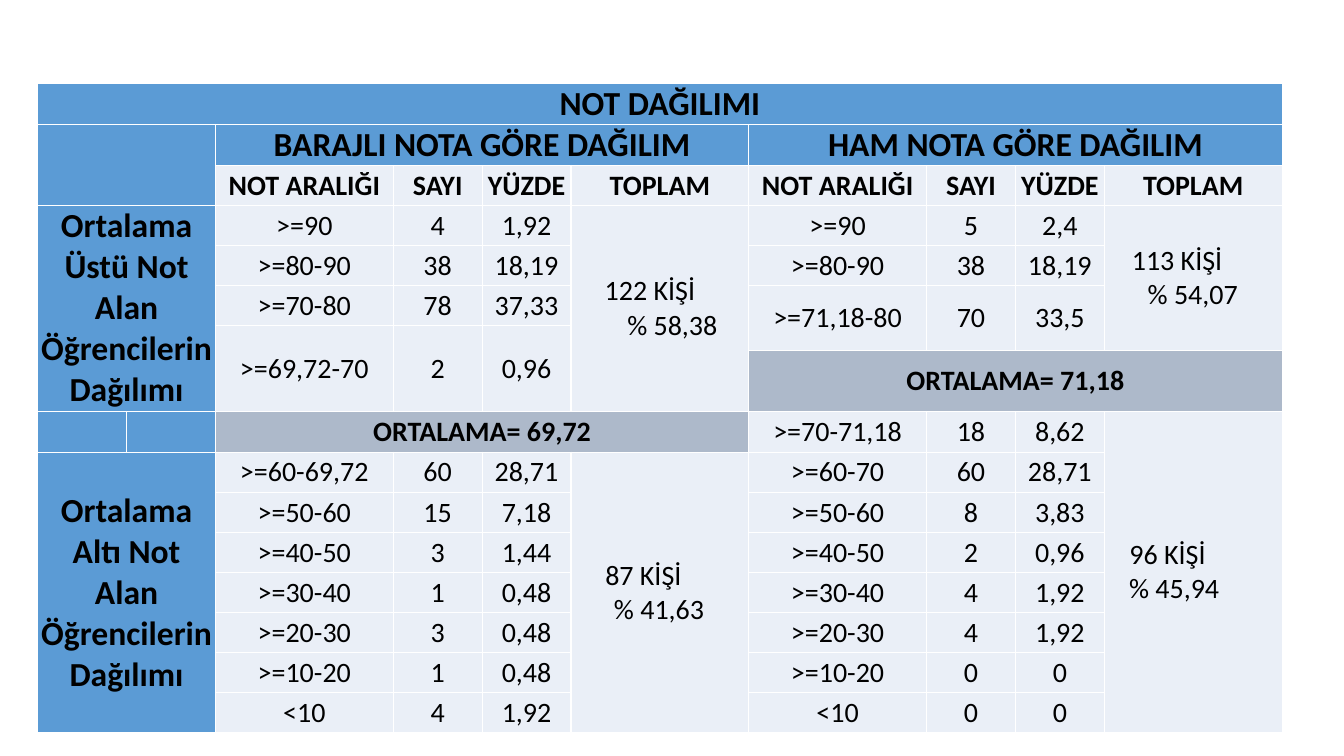
from lxml.etree import SubElement
from pptx import Presentation
from pptx.dml.color import RGBColor
from pptx.enum.text import MSO_ANCHOR, PP_ALIGN
from pptx.oxml.ns import qn
from pptx.util import Cm, Pt

COLORS = {"header": "5B9BD5", "body": "EAEFF7", "average": "ADB9CA",
          "border": "FFFFFF", "text": "000000"}
COLUMN_UNIT = 2.24
COLUMN_UNITS = [1, 1, 2, 1, 1, 2, 2, 1, 1, 2]
ROW_HEIGHTS = [1.03] * 2 + [1.01] * 4 + [0.63, 1.53, 1.03] + [1.01] * 7

HEADINGS = ["NOT ARALIĞI", "SAYI", "YÜZDE", "TOPLAM"]
# First column of each half, then its table row: grade range, count, percentage
GRADES = {
    2: {3: (">=90", "4", "1,92"), 4: (">=80-90", "38", "18,19"),
        5: (">=70-80", "78", "37,33"), 6: (">=69,72-70", "2", "0,96"),
        9: (">=60-69,72", "60", "28,71"), 10: (">=50-60", "15", "7,18"),
        11: (">=40-50", "3", "1,44"), 12: (">=30-40", "1", "0,48"),
        13: (">=20-30", "3", "0,48"), 14: (">=10-20", "1", "0,48"),
        15: ("<10", "4", "1,92")},
    6: {3: (">=90", "5", "2,4"), 4: (">=80-90", "38", "18,19"),
        5: (">=71,18-80", "70", "33,5"), 8: (">=70-71,18", "18", "8,62"),
        9: (">=60-70", "60", "28,71"), 10: (">=50-60", "8", "3,83"),
        11: (">=40-50", "2", "0,96"), 12: (">=30-40", "4", "1,92"),
        13: (">=20-30", "4", "1,92"), 14: (">=10-20", "0", "0"),
        15: ("<10", "0", "0")},
}
# Row, column, text, row span, column span
TITLES = [
    (0, 0, "NOT DAĞILIMI", 1, 10),
    (1, 0, "", 2, 2),
    (1, 2, "BARAJLI NOTA GÖRE DAĞILIM", 1, 4),
    (1, 6, "HAM NOTA GÖRE DAĞILIM", 1, 4),
    (3, 0, "Ortalama Üstü Not Alan Öğrencilerin Dağılımı", 5, 2),
    (9, 0, "Ortalama Altı Not Alan Öğrencilerin Dağılımı", 7, 2),
]
AVERAGES = [(7, 6, "ORTALAMA= 71,18"), (8, 2, "ORTALAMA= 69,72")]
# Row, column, row span, people, share, right margin of people, left margin of share
TOTALS = [
    (3, 5, 5, "122 KİŞİ", "% 58,38", 0.5, 1.13),
    (3, 9, 4, "113 KİŞİ", "% 54,07", 0.81, 0.79),
    (9, 5, 7, "87 KİŞİ", "% 41,63", 0.83, 0.79),
    (8, 9, 8, "96 KİŞİ", "% 45,94", 1.29, 0.33),
]


def write(cell, text, size=20, bold=False):
    cell.text = text
    font_format = {"name": "Calibri", "size": Pt(size), "bold": bold}
    for paragraph in cell.text_frame.paragraphs:
        paragraph.alignment = PP_ALIGN.CENTER
        for run in paragraph.runs:
            for attribute, value in font_format.items():
                setattr(run.font, attribute, value)
            run.font.color.rgb = RGBColor.from_string(COLORS["text"])


def paint(cell, color):
    cell.fill.solid()
    cell.fill.fore_color.rgb = RGBColor.from_string(COLORS[color])


presentation = Presentation()
presentation.slide_width = Cm(33.87)
presentation.slide_height = Cm(19.05)
slide = presentation.slides.add_slide(presentation.slide_layouts[6])

table = slide.shapes.add_table(
    len(ROW_HEIGHTS), len(COLUMN_UNITS), Cm(0.95), Cm(2.1),
    Cm(COLUMN_UNIT * sum(COLUMN_UNITS)), Cm(sum(ROW_HEIGHTS))).table
table.first_row = False
table.horz_banding = False
for column, units in zip(table.columns, COLUMN_UNITS):
    column.width = Cm(COLUMN_UNIT * units)
for row, height in zip(table.rows, ROW_HEIGHTS):
    row.height = Cm(height)

# Margins, borders and base fill of every cell
cell_format = {"margin_left": 0, "margin_right": 0, "margin_top": 0,
               "margin_bottom": 0, "vertical_anchor": MSO_ANCHOR.MIDDLE}
for row_index in range(len(ROW_HEIGHTS)):
    for column_index in range(len(COLUMN_UNITS)):
        cell = table.cell(row_index, column_index)
        for attribute, value in cell_format.items():
            setattr(cell, attribute, value)
        properties = cell._tc.get_or_add_tcPr()
        for side in ("lnL", "lnR", "lnT", "lnB"):
            line = SubElement(properties, qn(f"a:{side}"), w=str(Pt(1)))
            fill = SubElement(line, qn("a:solidFill"))
            SubElement(fill, qn("a:srgbClr"), val=COLORS["border"])
        is_header = row_index < 2 or column_index < 2
        paint(cell, "header" if is_header else "body")

for row_index, column_index, text, row_span, column_span in TITLES:
    cell = table.cell(row_index, column_index)
    cell.merge(table.cell(row_index + row_span - 1, column_index + column_span - 1))
    write(cell, text, size=24, bold=True)

for first_column, grade_rows in GRADES.items():
    for offset, heading in enumerate(HEADINGS):
        write(table.cell(2, first_column + offset), heading, bold=True)
    for row_index, values in grade_rows.items():
        for offset, value in enumerate(values):
            write(table.cell(row_index, first_column + offset), value)

# The last range above each average is two rows high
for row_index, first_column in ((6, 2), (5, 6)):
    for column_index in range(first_column, first_column + 3):
        table.cell(row_index, column_index).merge(table.cell(row_index + 1, column_index))

for row_index, column_index, text in AVERAGES:
    cell = table.cell(row_index, column_index)
    cell.merge(table.cell(row_index, column_index + 3))
    write(cell, text, bold=True)
    paint(cell, "average")

for row_index, column_index, row_span, people, share, right, left in TOTALS:
    cell = table.cell(row_index, column_index)
    cell.merge(table.cell(row_index + row_span - 1, column_index))
    write(cell, f"{people}\n{share}")
    people_paragraph, share_paragraph = cell.text_frame.paragraphs
    people_paragraph._p.get_or_add_pPr().set("marR", str(Cm(right)))
    share_paragraph._p.get_or_add_pPr().set("marL", str(Cm(left)))

presentation.save("out.pptx")
